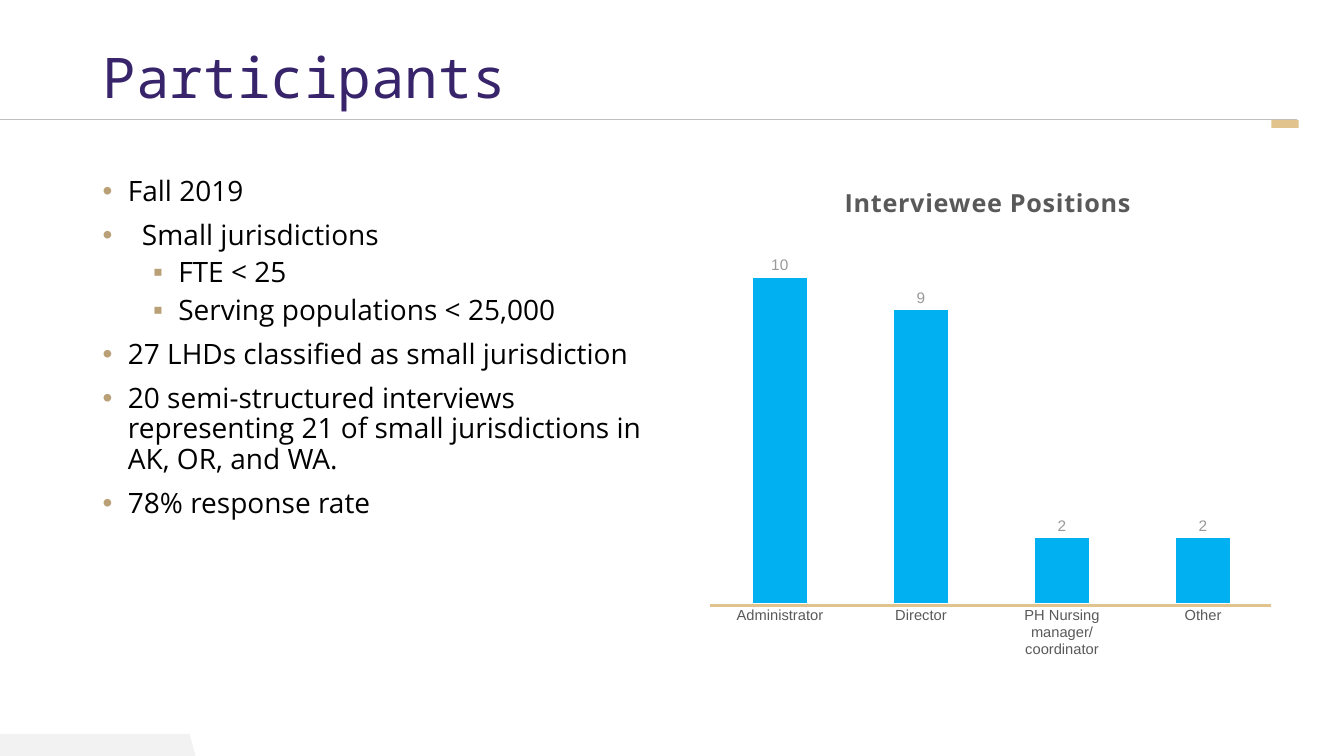
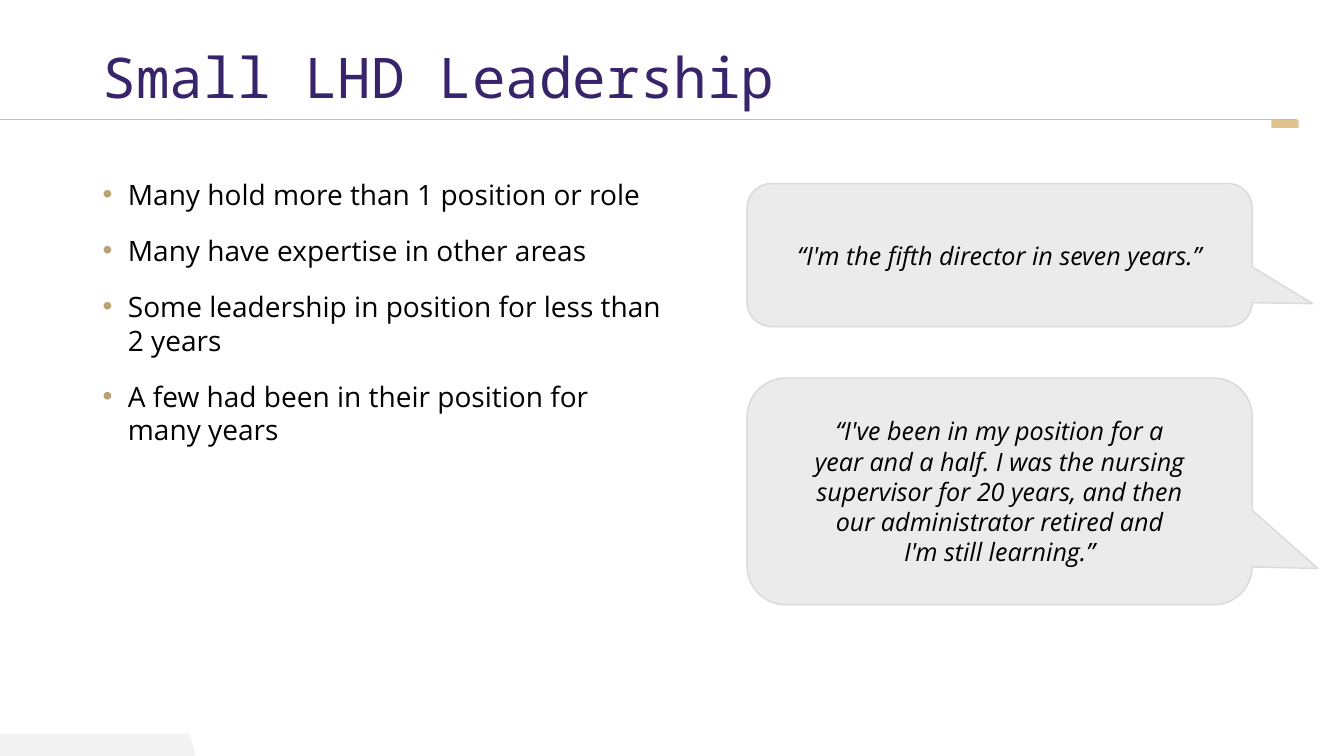
from lxml import etree
from pptx import Presentation
from pptx.chart.data import CategoryChartData
from pptx.dml.color import RGBColor
from pptx.enum.chart import XL_CHART_TYPE, XL_LABEL_POSITION, XL_TICK_MARK
from pptx.enum.shapes import MSO_CONNECTOR, MSO_SHAPE
from pptx.enum.text import MSO_ANCHOR, PP_ALIGN
from pptx.oxml import parse_xml
from pptx.oxml.ns import nsdecls, qn
from pptx.util import Inches, Pt

COLUMNS = XL_CHART_TYPE.COLUMN_CLUSTERED
OUTSIDE_END = XL_LABEL_POSITION.OUTSIDE_END
NO_TICKS = XL_TICK_MARK.NONE
STRAIGHT = MSO_CONNECTOR.STRAIGHT
RECTANGLE = MSO_SHAPE.RECTANGLE
CALLOUT = MSO_SHAPE.ROUNDED_RECTANGULAR_CALLOUT
TOP, MIDDLE = MSO_ANCHOR.TOP, MSO_ANCHOR.MIDDLE
LEFT, CENTER = PP_ALIGN.LEFT, PP_ALIGN.CENTER

PURPLE = RGBColor(0x37, 0x24, 0x6A)
GOLD = RGBColor(0xE1, 0xC4, 0x8D)
BULLET_GOLD = RGBColor(0xB9, 0xA0, 0x76)
RULE_GRAY = RGBColor(0xBF, 0xBF, 0xBF)
FOOTER_GRAY = RGBColor(0xF2, 0xF2, 0xF2)
CALLOUT_GRAY = RGBColor(0xEB, 0xEB, 0xEB)
CALLOUT_EDGE = RGBColor(0xD8, 0xD9, 0xDA)
DARK_GRAY = RGBColor(0x59, 0x59, 0x59)
LABEL_GRAY = RGBColor(0x99, 0x99, 0x99)
BLUE = RGBColor(0x00, 0xB0, 0xF0)
BLACK = RGBColor(0x00, 0x00, 0x00)

TITLE_FONT, BODY_FONT, CHART_FONT = "Noto Sans Mono", "Open Sans", "Arial"
BULLETS = ("•", "▪")


def set_font(font, size, color, name=BODY_FONT, bold=False, italic=False):
    font.size, font.name, font.bold, font.italic = Pt(size), name, bold, italic
    font.color.rgb = color


def write(paragraph, text, align=LEFT, spacing=1.0, before=0, after=0, **font):
    paragraph.text = text
    paragraph.alignment = align
    paragraph.line_spacing = spacing
    paragraph.space_before, paragraph.space_after = Pt(before), Pt(after)
    for run in paragraph.runs:
        set_font(run.font, **font)


def add_bullet(paragraph, level, hang):
    properties = paragraph._p.get_or_add_pPr()
    properties.set("marL", str(Inches(0.5 * level + hang)))
    properties.set("indent", str(-Inches(hang)))
    for xml in (
        f'<a:buClr {nsdecls("a")}><a:srgbClr val="{BULLET_GOLD}"/></a:buClr>',
        f'<a:buFont {nsdecls("a")} typeface="Arial"/>',
        f'<a:buChar {nsdecls("a")} char="{BULLETS[level]}"/>',
    ):
        properties.append(parse_xml(xml))


def place(chart_part, index, target=None, **fractions):
    """Fix a chart part at fractions of the chart's size."""
    layout = chart_part.find(qn("c:layout"))
    if layout is not None:
        chart_part.remove(layout)
    layout = etree.Element(qn("c:layout"))
    chart_part.insert(index, layout)
    manual = etree.SubElement(layout, qn("c:manualLayout"))
    settings = {"layoutTarget": target} if target else {}
    settings.update(xMode="edge", yMode="edge", **fractions)
    for key, value in settings.items():
        etree.SubElement(manual, qn(f"c:{key}")).set("val", str(value))


class Deck:
    """The shared style and the slide being built."""

    def __init__(self):
        self.presentation = Presentation()
        self.presentation.slide_width = Inches(13.33)
        self.presentation.slide_height = Inches(7.5)
        self.slide = None

    def new_slide(self, title):
        self.slide = self.presentation.slides.add_slide(
            self.presentation.slide_layouts[6])
        self.footer()
        self.line(0, 12.86, 1.19, RULE_GRAY, 0.75)
        self.shape(RECTANGLE, 12.61, 1.19, 0.27, 0.08, GOLD)
        heading = self.text_frame(0.92, 0.4, 11.5, 0.79, MIDDLE)
        write(heading.paragraphs[0], title, spacing=0.9,
              size=40, color=PURPLE, name=TITLE_FONT)

    def footer(self):
        builder = self.slide.shapes.build_freeform(0, Inches(7.5))
        builder.add_line_segments(
            [(Inches(x), Inches(y)) for x, y in ((1.94, 7.5), (1.88, 7.28), (0, 7.28))])
        self.paint(builder.convert_to_shape(), FOOTER_GRAY)

    def paint(self, shape, fill, edge=None):
        shape.shadow.inherit = False
        shape.fill.solid()
        shape.fill.fore_color.rgb = fill
        if edge is None:
            shape.line.fill.background()
        else:
            shape.line.color.rgb = edge
            shape.line.width = Pt(1)

    def shape(self, kind, left, top, width, height, fill, edge=None):
        shape = self.slide.shapes.add_shape(
            kind, Inches(left), Inches(top), Inches(width), Inches(height))
        self.paint(shape, fill, edge)
        return shape

    def line(self, left, right, y, color, weight):
        line = self.slide.shapes.add_connector(
            STRAIGHT, Inches(left), Inches(y), Inches(right), Inches(y))
        line.line.color.rgb = color
        line.line.width = Pt(weight)
        etree.SubElement(line._element.spPr, qn("a:effectLst"))

    def text_frame(self, left, top, width, height, anchor=TOP):
        frame = self.slide.shapes.add_textbox(
            Inches(left), Inches(top), Inches(width), Inches(height)).text_frame
        frame.word_wrap = True
        frame.vertical_anchor = anchor
        return frame

    def bullet_list(self, width, items, spacing=1.0, after=0):
        """Items are (text, level, hanging indent in inches)."""
        frame = self.text_frame(0.92, 1.71, width, 5.05)
        for index, (text, level, hang) in enumerate(items):
            paragraph = frame.add_paragraph() if index else frame.paragraphs[0]
            add_bullet(paragraph, level, hang)
            before = (10, 5)[level] if index else 0
            write(paragraph, text, spacing=spacing, before=before, after=after,
                  size=20, color=BLACK)

    def quote(self, top, height, text, tail, inset=0.1):
        callout = self.shape(CALLOUT, 7.41, top, 5.01, height,
                             CALLOUT_GRAY, CALLOUT_EDGE)
        for index, value in enumerate((*tail, 0.17)):
            callout.adjustments[index] = value
        frame = callout.text_frame
        frame.word_wrap = True
        frame.vertical_anchor = MIDDLE
        frame.margin_left = frame.margin_right = Inches(inset)
        write(frame.paragraphs[0], text, align=CENTER,
              size=18, color=BLACK, italic=True)

    def column_chart(self, title, categories, values):
        data = CategoryChartData()
        data.categories = categories
        data.add_series("Series 1", values)
        chart = self.slide.shapes.add_chart(
            COLUMNS, Inches(6.86), Inches(1.57), Inches(5.89), Inches(4.95), data).chart
        set_font(chart.font, 10, BLACK)
        chart.has_legend = False

        chart.has_title = True
        heading = chart.chart_title.text_frame.paragraphs[0]
        write(heading, title, align=CENTER, size=18, color=DARK_GRAY, bold=True)
        heading.runs[0].font._element.set("spc", "50")
        place(chart.chart_title._element, 1, x=0.25, y=0.04)
        place(chart._chartSpace.chart.plotArea, 0, "inner",
              x=0.03, y=0.11, w=0.95, h=0.79)

        names = chart.category_axis
        names.major_tick_mark = names.minor_tick_mark = NO_TICKS
        names.format.line.fill.background()
        set_font(names.tick_labels.font, 10.5, DARK_GRAY, CHART_FONT)
        amounts = chart.value_axis
        amounts.minimum_scale, amounts.maximum_scale = 0, 12
        amounts.has_major_gridlines = False
        amounts.visible = False

        plot = chart.plots[0]
        plot.gap_width = 164
        plot.vary_by_categories = False
        columns = plot.series[0]
        columns.format.fill.solid()
        columns.format.fill.fore_color.rgb = BLUE
        labels = columns.data_labels
        labels.show_value = True
        labels.position = OUTSIDE_END
        set_font(labels.font, 11, LABEL_GRAY, CHART_FONT)


def main():
    deck = Deck()

    deck.new_slide("Participants")
    deck.bullet_list(5.56, [
        ("Fall 2019", 0, 0.25),
        ("Small jurisdictions", 0, 0.39),
        ("FTE < 25", 1, 0.25),
        ("Serving populations < 25,000", 1, 0.25),
        ("27 LHDs classified as small jurisdiction", 0, 0.25),
        ("20 semi-structured interviews representing 21 of small jurisdictions in "
         "AK, OR, and WA.", 0, 0.25),
        ("78% response rate", 0, 0.25),
    ], spacing=0.9)
    deck.column_chart(
        "Interviewee Positions",
        ("Administrator", "Director", "PH Nursing manager/coordinator", "Other"),
        (10, 9, 2, 2))
    deck.line(7.04, 12.61, 6.01, GOLD, 2.25)

    deck.new_slide("Small LHD Leadership")
    findings = (
        "Many hold more than 1 position or role",
        "Many have expertise in other areas",
        "Some leadership in position for less than 2 years",
        "A few had been in their position for many years",
    )
    deck.bullet_list(5.75, [(finding, 0, 0.25) for finding in findings], after=6)
    deck.quote(1.82, 1.42, "“I'm the fifth director in seven years.”", (0.62, 0.34))
    deck.quote(
        3.75, 2.25,
        "“I've been in my position for a\vyear and a half. I was the nursing "
        "supervisor for 20 years, and then\vour administrator retired and\v"
        "I'm still learning.”", (0.63, 0.34), inset=0.2)

    deck.presentation.save("out.pptx")


if __name__ == "__main__":
    main()
